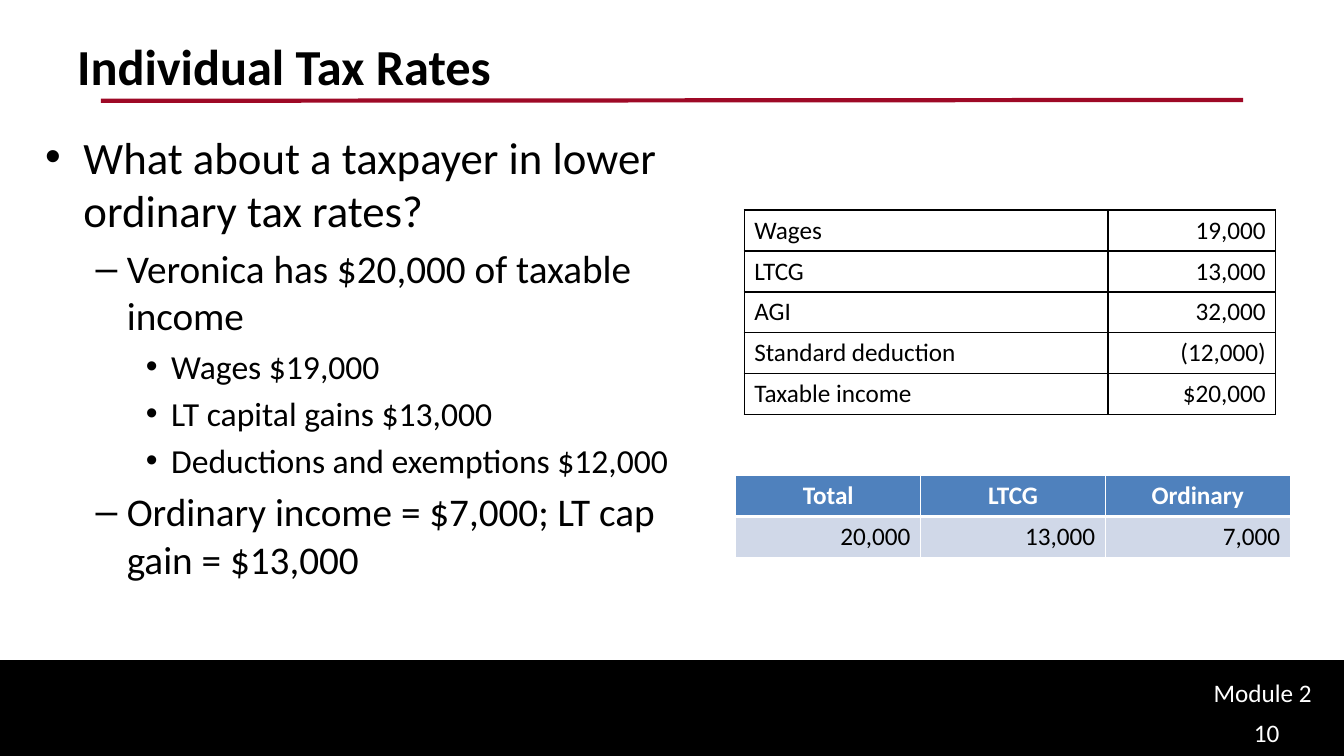
from dataclasses import dataclass

from lxml import etree
from pptx import Presentation
from pptx.dml.color import RGBColor
from pptx.enum.shapes import MSO_CONNECTOR, MSO_SHAPE
from pptx.enum.text import MSO_ANCHOR, PP_ALIGN
from pptx.oxml.ns import qn
from pptx.util import Inches, Pt

STRAIGHT = MSO_CONNECTOR.STRAIGHT
RECTANGLE = MSO_SHAPE.RECTANGLE
LEFT, CENTER, RIGHT = PP_ALIGN.LEFT, PP_ALIGN.CENTER, PP_ALIGN.RIGHT
TOP, BOTTOM = MSO_ANCHOR.TOP, MSO_ANCHOR.BOTTOM


@dataclass(frozen=True)
class Theme:
    font: str = "Calibri"
    black: str = "000000"
    white: str = "FFFFFF"
    red: str = "9E0926"
    blue: str = "4F81BD"
    pale: str = "D0D8E8"
    title: int = 36
    small: int = 18
    bullet_sizes: tuple = (32, 28, 24)


@dataclass(frozen=True)
class CellStyle:
    fill: str
    color: str
    aligns: tuple
    borders: dict
    bold: bool = False
    anchor: int = TOP


class SlideBuilder:
    columns, rows = 160, 90
    bullets = (("•", 0.38, 0.38), ("–", 0.81, 0.31), ("•", 1.25, 0.25))

    def __init__(self, presentation, theme):
        self.theme = theme
        self.column = presentation.slide_width / self.columns
        self.row = presentation.slide_height / self.rows
        self.slide = presentation.slides.add_slide(presentation.slide_layouts[6])

    def place(self, left, top, width, height):
        return (round(left * self.column), round(top * self.row),
                round(width * self.column), round(height * self.row))

    def band(self, area, color):
        shape = self.slide.shapes.add_shape(RECTANGLE, *self.place(*area))
        shape.shadow.inherit = False
        shape.fill.solid()
        shape.fill.fore_color.rgb = RGBColor.from_string(color)
        shape.line.color.rgb = RGBColor.from_string(color)
        shape.line.width = Pt(2)

    def rule(self, start, end, color, width):
        connector = self.slide.shapes.add_connector(
            STRAIGHT, *self.place(*start, *end))
        connector.line.color.rgb = RGBColor.from_string(color)
        connector.line.width = Pt(width)
        etree.SubElement(connector._element.spPr, qn("a:effectLst"))

    def add_text(self, paragraph, text, size, color, bold=False):
        run = paragraph.add_run()
        run.text = text
        run.font.name = self.theme.font
        run.font.size = Pt(size)
        run.font.bold = bold
        run.font.color.rgb = RGBColor.from_string(color)

    def frame(self, area):
        text_frame = self.slide.shapes.add_textbox(*self.place(*area)).text_frame
        text_frame.word_wrap = True
        return text_frame

    def label(self, area, text, size, color, bold=False):
        self.add_text(self.frame(area).paragraphs[0], text, size, color, bold)

    def bullet_list(self, area, items):
        text_frame = self.frame(area)
        for index, (level, text) in enumerate(items):
            paragraph = text_frame.add_paragraph() if index else text_frame.paragraphs[0]
            symbol, margin, hanging = self.bullets[level]
            size = self.theme.bullet_sizes[level]
            paragraph.level = level
            if index:
                paragraph.space_before = Pt(size * 0.2)
            properties = paragraph._p.get_or_add_pPr()
            properties.set("marL", str(Inches(margin)))
            properties.set("indent", str(-Inches(hanging)))
            etree.SubElement(properties, qn("a:buFont"), typeface="Arial")
            etree.SubElement(properties, qn("a:buChar"), char=symbol)
            self.add_text(paragraph, text, size, self.theme.black)

    def style_cell(self, cell, text, style, align):
        properties = cell._tc.get_or_add_tcPr()
        for side, (color, width) in style.borders.items():
            line = etree.SubElement(properties, qn(f"a:ln{side}"), w=str(Pt(width)))
            fill = etree.SubElement(line, qn("a:solidFill"))
            etree.SubElement(fill, qn("a:srgbClr"), val=color)
        cell.fill.solid()
        cell.fill.fore_color.rgb = RGBColor.from_string(style.fill)
        cell.vertical_anchor = style.anchor
        paragraph = cell.text_frame.paragraphs[0]
        paragraph.alignment = align
        self.add_text(paragraph, text, self.theme.small, style.color, style.bold)

    def table(self, corner, widths, row_height, records, styles):
        area = self.place(*corner, sum(widths), row_height * len(records))
        table = self.slide.shapes.add_table(len(records), len(widths), *area).table
        table.first_row = table.horz_banding = False
        for column, width in zip(table.columns, widths):
            column.width = round(width * self.column)
        for row, record, style in zip(table.rows, records, styles):
            row.height = round(row_height * self.row)
            for cell, text, align in zip(row.cells, record, style.aligns):
                self.style_cell(cell, text, style, align)


def main():
    presentation = Presentation()
    presentation.slide_width = Inches(13.333)
    presentation.slide_height = Inches(7.5)
    theme = Theme()
    builder = SlideBuilder(presentation, theme)

    builder.band((0, 78.7, 160, 11.3), theme.black)
    builder.rule((12, 12), (148, 11.9), theme.red, 3)
    builder.label((8, 3.6, 144, 15), "Individual Tax Rates",
                  theme.title, theme.black, True)
    builder.bullet_list((4.2, 14.8, 80.3, 57.7), [
        (0, "What about a taxpayer in lower ordinary tax rates?"),
        (1, "Veronica has $20,000 of taxable income"),
        (2, "Wages $19,000"),
        (2, "LT capital gains $13,000"),
        (2, "Deductions and exemptions $12,000"),
        (1, "Ordinary income = $7,000; LT cap gain = $13,000"),
    ])
    builder.label((143.3, 80, 15.8, 4.8), "Module 2", theme.small, theme.white)
    builder.label((148.1, 84.8, 10.9, 5.2), "10", theme.small, theme.white)

    row_height = 4.88
    income = [
        ("Wages", "19,000"),
        ("LTCG", "13,000"),
        ("AGI", "32,000"),
        ("Standard deduction", "(12,000)"),
        ("Taxable income", "$20,000"),
    ]
    plain = CellStyle(theme.white, theme.black, (LEFT, RIGHT),
                      dict.fromkeys("LRTB", (theme.black, 1)))
    builder.table((88.6, 25), (43.3, 20), row_height, income, [plain] * len(income))

    thin, thick = (theme.white, 1), (theme.white, 3)
    header = CellStyle(theme.blue, theme.white, (CENTER,) * 3,
                       {"L": thin, "R": thin, "T": thin, "B": thick}, bold=True)
    values = CellStyle(theme.pale, theme.black, (RIGHT,) * 3,
                       {"L": thin, "R": thin, "T": thick, "B": thin}, anchor=BOTTOM)
    builder.table((87.6, 56.6), (22,) * 3, row_height,
                  [("Total", "LTCG", "Ordinary"), ("20,000", "13,000", "7,000")],
                  [header, values])

    presentation.save("out.pptx")


if __name__ == "__main__":
    main()
